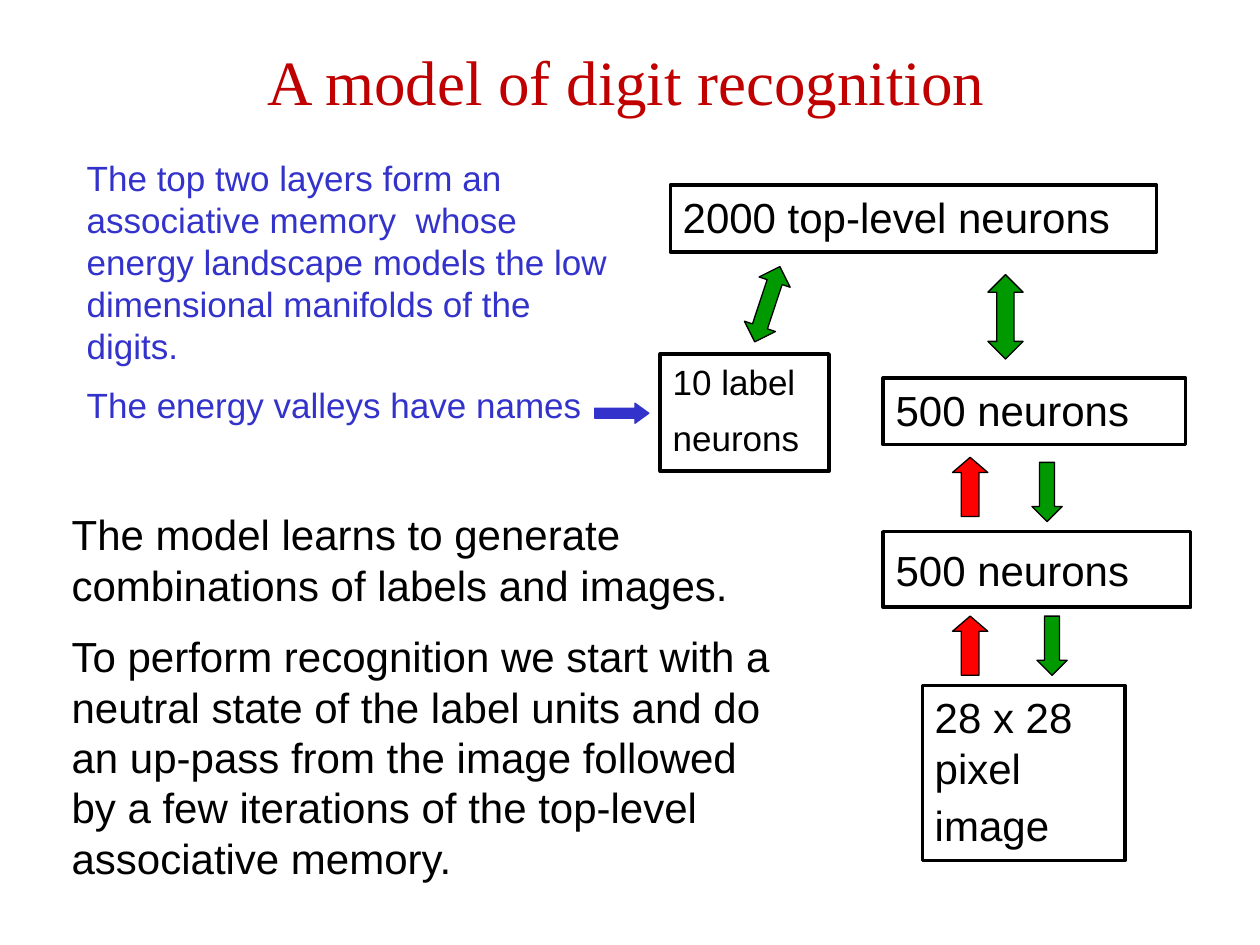
from pptx import Presentation
from pptx.dml.color import RGBColor
from pptx.enum.shapes import MSO_SHAPE
from pptx.enum.text import MSO_ANCHOR, PP_ALIGN
from pptx.util import Inches, Pt

RECTANGLE = MSO_SHAPE.RECTANGLE
UP, DOWN = MSO_SHAPE.UP_ARROW, MSO_SHAPE.DOWN_ARROW
BOTH, RIGHT = MSO_SHAPE.UP_DOWN_ARROW, MSO_SHAPE.RIGHT_ARROW
LEFT, CENTER = PP_ALIGN.LEFT, PP_ALIGN.CENTER
TOP, MIDDLE = MSO_ANCHOR.TOP, MSO_ANCHOR.MIDDLE

BLACK, RED, GREEN, BLUE, TITLE_RED = "000000", "FF0000", "009900", "3333CC", "C00000"

LAYERS = [
    ("2000 top-level neurons", (5.32, 1.47, 3.86, 0.53), 24, False),
    ("500 neurons", (7.01, 3, 2.4, 0.53), 24, False),
    ("500 neurons", (7.01, 4.22, 2.44, 0.6), 24, True),
    ("28 x 28 pixel image", (7.32, 5.44, 1.61, 1.39), 24, True),
    ("10 label neurons", (5.24, 2.81, 1.34, 0.93), 20, True),
]
ARROWS = [
    (BOTH, (7.84, 2.18, 0.28, 0.67), GREEN, BLACK, 0.49, 0),
    (BOTH, (5.96, 2.1, 0.26, 0.63), GREEN, BLACK, 0.48, 18.4),
    (DOWN, (8.19, 3.67, 0.24, 0.47), GREEN, BLACK, 0.5, 0),
    (DOWN, (8.23, 4.89, 0.24, 0.47), GREEN, BLACK, 0.5, 0),
    (UP, (7.56, 4.89, 0.28, 0.47), RED, BLACK, 0.43, 0),
    (UP, (7.56, 3.63, 0.28, 0.47), RED, BLACK, 0.43, 0),
    (RIGHT, (4.72, 3.2, 0.43, 0.16), BLUE, BLUE, 0.69, 0),
]
MODEL_NOTES = [
    "The model learns to generate combinations of labels and images.",
    "To perform recognition we start with a neutral state of the label units and do "
    "an up-pass from the image followed by a few iterations of the top-level "
    "associative memory.",
]
MEMORY_NOTES = [
    "The top two layers form an associative memory  whose energy landscape models "
    "the low dimensional manifolds of the digits.",
    "The energy valleys have names",
]


def color(value):
    """Turn a hex string into a colour."""
    return RGBColor.from_string(value)


def place(bounds):
    """Turn left, top, width and height in inches into lengths."""
    return [Inches(length) for length in bounds]


def write(box, paragraphs, size, ink, font="Arial", align=LEFT, anchor=TOP):
    """Fill a box with paragraphs, spaced by half their text size."""
    frame = box.text_frame
    frame.word_wrap = True
    frame.vertical_anchor = anchor
    for index, text in enumerate(paragraphs):
        para = frame.add_paragraph() if index else frame.paragraphs[0]
        para.add_run().text = text
        para.alignment = align
        para.space_before = Pt(size / 2 if index else 0)
        para.font.name = font
        para.font.size = Pt(size)
        para.font.color.rgb = color(ink)


def add_text(page, bounds, paragraphs, size, ink, **style):
    """Add a plain text box."""
    write(page.shapes.add_textbox(*place(bounds)), paragraphs, size, ink, **style)


def add_outlined(page, kind, bounds, line, width):
    """Add a preset shape with an outline and no shadow."""
    shape = page.shapes.add_shape(kind, *place(bounds))
    shape.shadow.inherit = False
    shape.line.color.rgb = color(line)
    shape.line.width = Pt(width)
    return shape


def add_layer(page, text, bounds, size, tall_last_line):
    """Add a framed layer label, with a larger closing space if its last line is tall."""
    box = add_outlined(page, RECTANGLE, bounds, BLACK, 2)
    box.fill.background()
    write(box, [text], size, BLACK)
    if tall_last_line:
        span = box.text_frame.paragraphs[0].add_run()
        span.text = " "
        span.font.size = Pt(28)


def add_arrow(page, kind, bounds, fill, line, head, rotation):
    """Add a filled block arrow with a given head length."""
    arrow = add_outlined(page, kind, bounds, line, 0.75)
    arrow.fill.solid()
    arrow.fill.fore_color.rgb = color(fill)
    arrow.adjustments[0] = 0.5
    arrow.adjustments[1] = head
    arrow.rotation = rotation


def main():
    """Build the slide and save it."""
    deck = Presentation()
    deck.slide_width, deck.slide_height = Inches(10), Inches(7.5)
    page = deck.slides.add_slide(deck.slide_layouts[6])
    add_text(page, (0.47, 0.01, 9, 1.25), ["A model of digit recognition"], 36, TITLE_RED,
             font="Times New Roman", align=CENTER, anchor=MIDDLE)
    for layer in LAYERS:
        add_layer(page, *layer)
    for arrow in ARROWS:
        add_arrow(page, *arrow)
    add_text(page, (0.47, 3.99, 5.91, 3.1), MODEL_NOTES, 24, BLACK)
    add_text(page, (0.59, 1.19, 4.33, 2.27), MEMORY_NOTES, 20, BLUE)
    deck.save("out.pptx")


if __name__ == "__main__":
    main()
